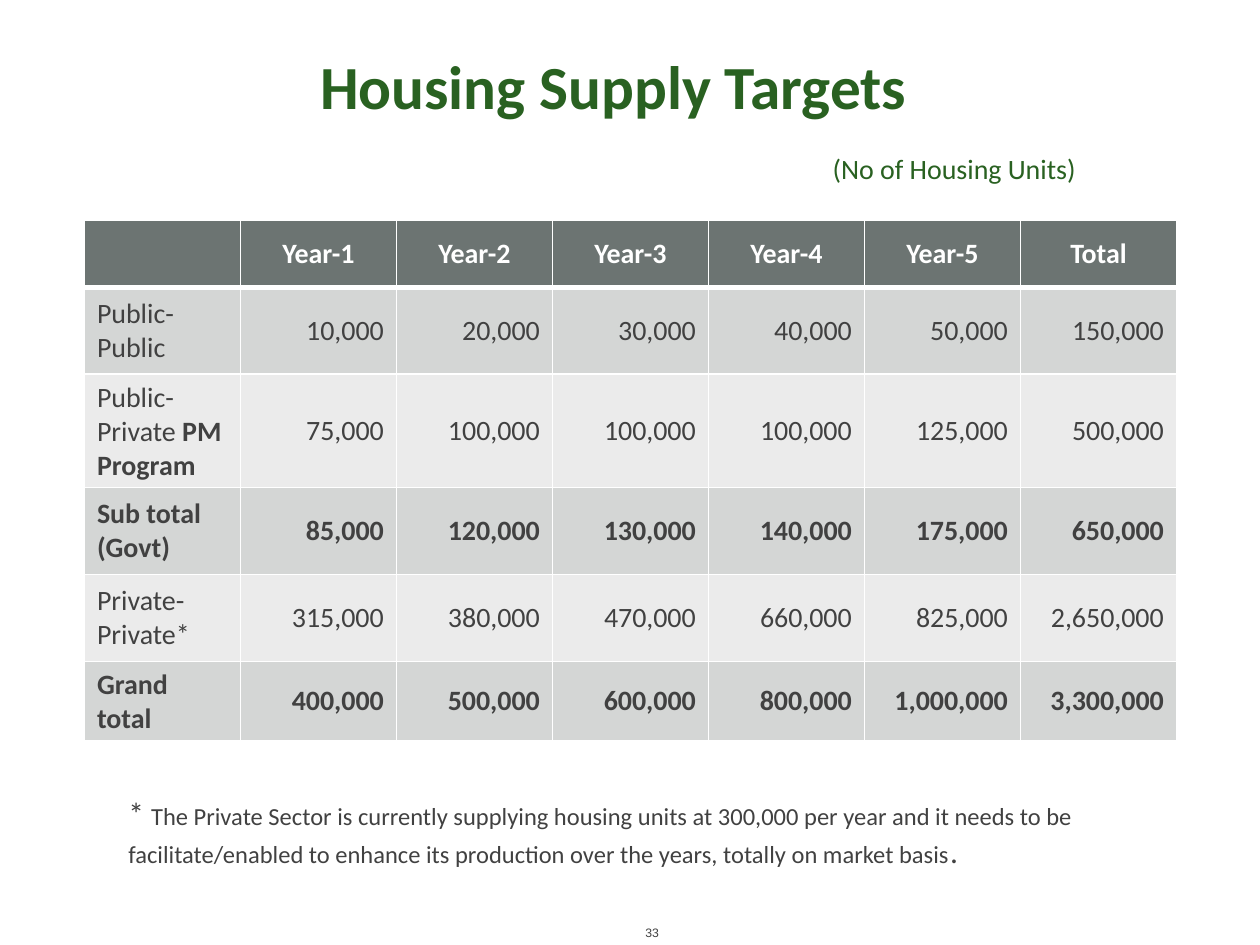
from lxml import etree
from pptx import Presentation
from pptx import util as u
from pptx.dml.color import RGBColor
from pptx.enum import text
from pptx.oxml import ns

GREEN = RGBColor(0x29, 0x61, 0x21)
INK = RGBColor(0x41, 0x41, 0x41)
WHITE = RGBColor(0xFF, 0xFF, 0xFF)
HEAD = RGBColor(0x6C, 0x74, 0x72)
DARK = RGBColor(0xD4, 0xD6, 0xD5)
LIGHT = RGBColor(0xEB, 0xEB, 0xEB)
LEFT, MID, RIGHT = text.PP_ALIGN.LEFT, text.PP_ALIGN.CENTER, text.PP_ALIGN.RIGHT


def write(par, words, size=16, bold=False, color=INK, font="Calibri", align=LEFT):
    par.alignment = align
    run = par.add_run()
    run.text = words
    run.font.size = u.Pt(size)
    run.font.bold = bold
    run.font.name = font
    run.font.color.rgb = color


def border(cell, widths):
    props = cell._tc.get_or_add_tcPr()
    for i, (side, width) in enumerate(zip("LRTB", widths)):
        line = etree.Element(ns.qn("a:ln" + side), w=str(u.Pt(width)))
        fill = etree.SubElement(line, ns.qn("a:solidFill"))
        etree.SubElement(fill, ns.qn("a:srgbClr"), val=str(WHITE))
        props.insert(i, line)


deck = Presentation()
deck.slide_width, deck.slide_height = u.Inches(10), u.Inches(7.5)
slide = deck.slides.add_slide(deck.slide_layouts[6])

# Page number
box = slide.shapes.add_textbox(u.Inches(4.88), u.Inches(7.22), u.Inches(0.59), u.Inches(0.28))
frame = box.text_frame
frame.word_wrap = True
frame.vertical_anchor = text.MSO_ANCHOR.BOTTOM
frame.margin_left = frame.margin_right = u.Inches(0.07)
frame.margin_top = frame.margin_bottom = u.Inches(0.04)
write(frame.paragraphs[0], "33", size=7, font="Arial", align=MID)

# Table of targets
rows = [
    ["", "Year-1", "Year-2", "Year-3", "Year-4", "Year-5", "Total"],
    ["Public-Public", "10,000", "20,000", "30,000", "40,000", "50,000", "150,000"],
    ["Public-Private ", "75,000", "100,000", "100,000", "100,000", "125,000", "500,000"],
    ["Sub total (Govt)", "85,000", "120,000", "130,000", "140,000", "175,000", "650,000"],
    ["Private-Private*", "315,000", "380,000", "470,000", "660,000", "825,000", "2,650,000"],
    ["Grand total", "400,000", "500,000", "600,000", "800,000", "1,000,000", "3,300,000"],
]
highs = [0.53, 0.69, 0.69, 0.69, 0.69, 0.53]
table = slide.shapes.add_table(len(rows), len(rows[0]), u.Inches(0.67), u.Inches(1.75),
                               u.Inches(8.67), u.Inches(sum(highs))).table
for r, row in enumerate(rows):
    table.rows[r].height = u.Inches(highs[r])
    for c, words in enumerate(row):
        cell = table.cell(r, c)
        cell.vertical_anchor = text.MSO_ANCHOR.MIDDLE
        cell.fill.solid()
        cell.fill.fore_color.rgb = HEAD if r == 0 else DARK if r % 2 else LIGHT
        border(cell, (1, 1, 3 if r == 1 else 1, 3 if r == 0 else 1))
        if words:
            write(cell.text_frame.paragraphs[0], words,
                  bold=r in (0, 3, 5), color=INK if r else WHITE,
                  align=MID if r == 0 else RIGHT if c else LEFT)
write(table.cell(2, 0).text_frame.paragraphs[0], "PM Program", bold=True)

# Footnote
box = slide.shapes.add_textbox(u.Inches(0.92), u.Inches(6.25), u.Inches(8.5), u.Inches(0.71))
box.text_frame.word_wrap = True
note = box.text_frame.paragraphs[0]
write(note, "* ", size=18)
write(note, "The Private Sector is currently supplying housing units at 300,000 per year "
      "and it needs to be facilitate/enabled to enhance its production over the years, "
      "totally on market basis", size=14)
write(note, ".", size=18)

# Title, with the unit indented below it
box = slide.shapes.add_textbox(u.Inches(0.33), u.Inches(0.33), u.Inches(9.08), u.Inches(1.42))
frame = box.text_frame
frame.word_wrap = True
write(frame.paragraphs[0], "Housing Supply Targets", size=35, bold=True, color=GREEN, align=MID)
unit = frame.add_paragraph()
unit.space_before = u.Pt(17.5)
unit._p.get_or_add_pPr().set("marL", str(u.Inches(6.18)))
write(unit, "(No of Housing Units)", color=GREEN)

deck.save("out.pptx")
